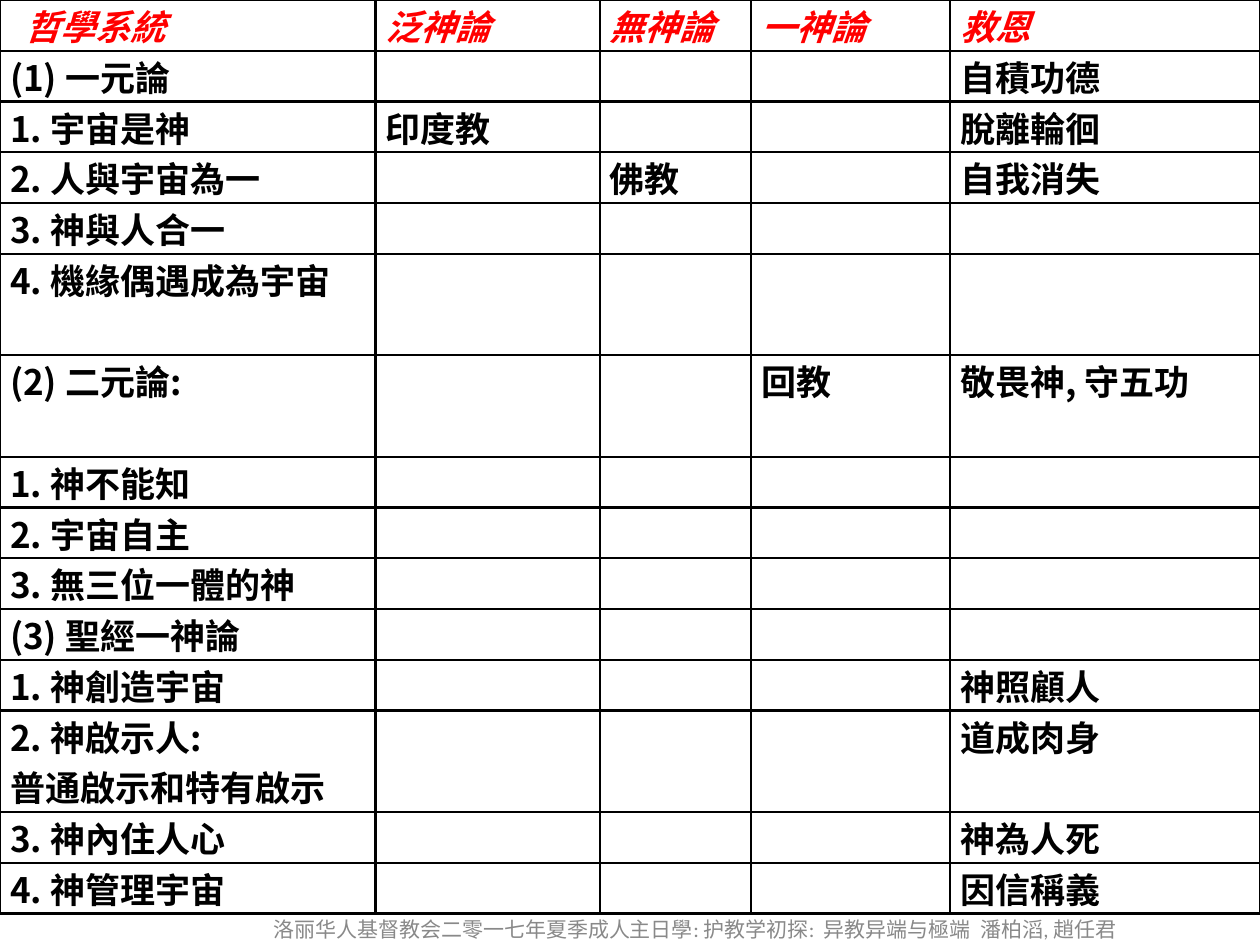
"""Build a slide comparing philosophical systems and their views of salvation."""
import dataclasses

import lxml.etree
import pptx
import pptx.dml.color
import pptx.enum.text
import pptx.oxml.ns
import pptx.table
import pptx.text.text
import pptx.util

Inches = pptx.util.Inches
Pt = pptx.util.Pt
qn = pptx.oxml.ns.qn

COLORS = {"heading": "FF0000", "body": "000000", "border": "000000", "footer": "898989"}
CJK_FONT = "Noto Sans CJK SC"
HEADING = {"name": CJK_FONT, "size": Pt(20), "bold": True, "italic": True}
BODY = HEADING | {"italic": False}
FOOTER = {"name": "Calibri", "size": Pt(12)}
CELL_FORMAT = {
    "margin_left": Inches(0.08),
    "margin_right": Inches(0.07),
    "margin_top": 0,
    "margin_bottom": 0,
}
COLUMN_WIDTHS = (2.98, 1.78, 1.2, 1.58, 2.46)
TABLE_HEIGHT = 7.25
HEADINGS = ("哲學系統", "泛神論", "無神論", "一神論", "救恩")
FOOTER_TEXT = "洛丽华人基督教会二零一七年夏季成人主日學: 护教学初探:  异教异端与極端  潘柏滔, 趙任君"


@dataclasses.dataclass(frozen=True)
class Belief:
    """One row: a belief, the religions that hold it, and its salvation."""

    system: str
    salvation: str = ""
    pantheism: str = ""
    atheism: str = ""
    monotheism: str = ""
    lines: int = 1

    def texts(self) -> tuple[str, ...]:
        """Return the cell texts in column order."""
        return self.system, self.pantheism, self.atheism, self.monotheism, self.salvation


BELIEFS = (
    Belief("(1) 一元論", "自積功德"),
    Belief("1. 宇宙是神", "脫離輪徊", pantheism="印度教"),
    Belief("2. 人與宇宙為一", "自我消失", atheism="佛教"),
    Belief("3. 神與人合一"),
    Belief("4. 機緣偶遇成為宇宙", lines=2),
    Belief("(2) 二元論:", "敬畏神, 守五功", monotheism="回教", lines=2),
    Belief("1. 神不能知"),
    Belief("2. 宇宙自主"),
    Belief("3. 無三位一體的神"),
    Belief("(3) 聖經一神論"),
    Belief("1. 神創造宇宙", "神照顧人"),
    Belief("2. 神啟示人:\n普通啟示和特有啟示", "道成肉身", lines=2),
    Belief("3. 神內住人心", "神為人死"),
    Belief("4. 神管理宇宙", "因信稱義"),
)


def apply_format(target: object, values: dict) -> None:
    """Set each named attribute on the target."""
    for name, value in values.items():
        setattr(target, name, value)


def write_text(frame: pptx.text.text.TextFrame, text: str, font: dict, color: str) -> None:
    """Fill a text frame and format all its runs."""
    frame.text = text
    for paragraph in frame.paragraphs:
        for run in paragraph.runs:
            apply_format(run.font, font)
            run.font.color.rgb = pptx.dml.color.RGBColor.from_string(COLORS[color])
            east_asian = lxml.etree.SubElement(run.font._element, qn("a:ea"))
            east_asian.set("typeface", CJK_FONT)


def draw_borders(cell: pptx.table._Cell) -> None:
    """Give a cell a solid border on all four sides."""
    properties = cell._tc.get_or_add_tcPr()
    for side in ("lnL", "lnR", "lnT", "lnB"):
        line = lxml.etree.SubElement(properties, qn(f"a:{side}"), w=str(Pt(1.5)))
        fill = lxml.etree.SubElement(line, qn("a:solidFill"))
        lxml.etree.SubElement(fill, qn("a:srgbClr"), val=COLORS["border"])


def fill_row(table: pptx.table.Table, index: int, texts: tuple[str, ...],
             font: dict, color: str) -> None:
    """Write and format one table row."""
    for cell, text in zip(table.rows[index].cells, texts):
        draw_borders(cell)
        cell.fill.background()
        apply_format(cell, CELL_FORMAT)
        if text:
            write_text(cell.text_frame, text, font, color)


def main() -> None:
    """Build and save the presentation."""
    presentation = pptx.Presentation()
    apply_format(presentation, {"slide_width": Inches(10), "slide_height": Inches(7.5)})
    slide = presentation.slides.add_slide(presentation.slide_layouts[6])

    footer = slide.shapes.add_textbox(Inches(1.78), Inches(7.23), Inches(7.47), Inches(0.28))
    apply_format(footer.text_frame, {
        "word_wrap": True,
        "vertical_anchor": pptx.enum.text.MSO_ANCHOR.MIDDLE,
    })
    write_text(footer.text_frame, FOOTER_TEXT, FOOTER, "footer")
    footer.text_frame.paragraphs[0].alignment = pptx.enum.text.PP_ALIGN.CENTER

    line_counts = [1] + [belief.lines for belief in BELIEFS]
    line_height = TABLE_HEIGHT / sum(line_counts)
    comparison = slide.shapes.add_table(
        len(line_counts), len(COLUMN_WIDTHS), 0, 0,
        Inches(sum(COLUMN_WIDTHS)), Inches(TABLE_HEIGHT),
    ).table
    apply_format(comparison, {"first_row": False, "horz_banding": False})
    for column, width in zip(comparison.columns, COLUMN_WIDTHS):
        column.width = Inches(width)
    for row, lines in zip(comparison.rows, line_counts):
        row.height = Inches(line_height * lines)

    fill_row(comparison, 0, HEADINGS, HEADING, "heading")
    comparison.cell(0, 0).margin_left = Inches(0.2)
    for index, belief in enumerate(BELIEFS, start=1):
        fill_row(comparison, index, belief.texts(), BODY, "body")

    presentation.save("out.pptx")


if __name__ == "__main__":
    main()
